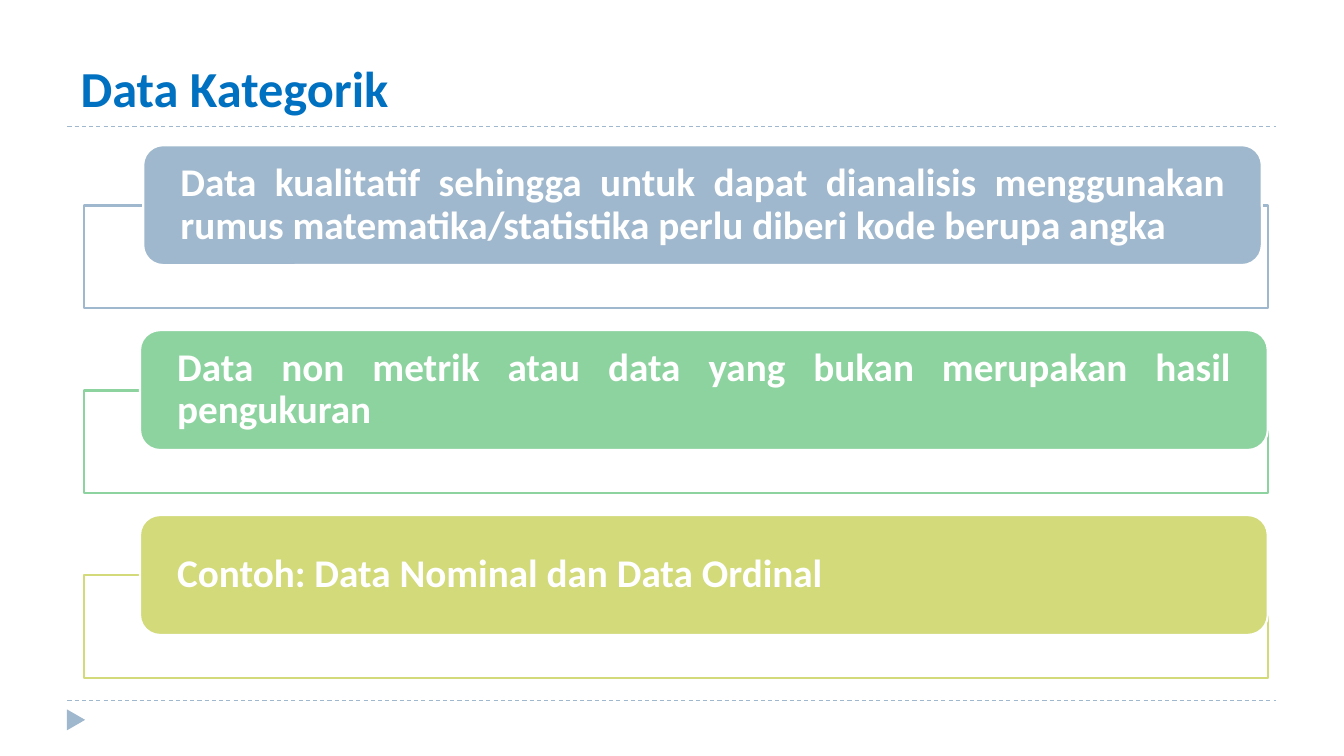
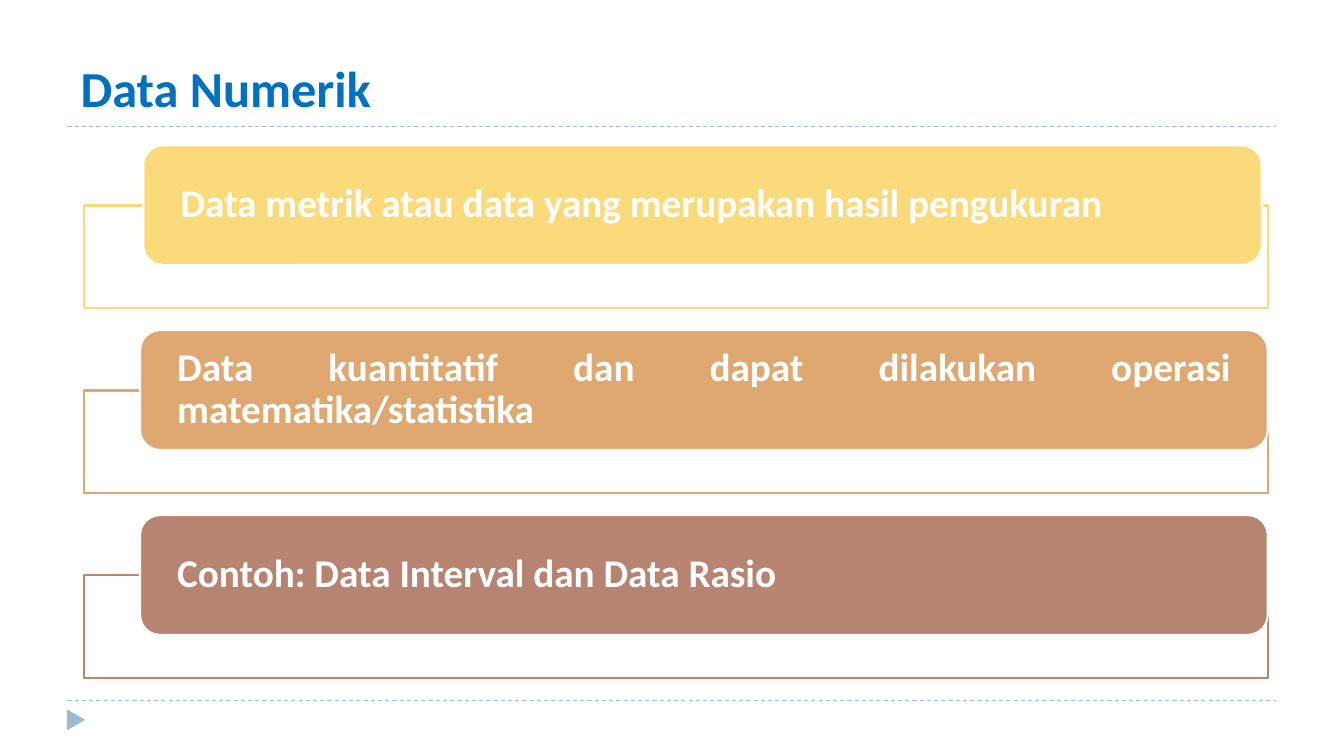
from dataclasses import dataclass

import pptx
import pptx.dml.color
import pptx.enum.dml
import pptx.enum.shapes
import pptx.enum.text
import pptx.oxml.ns
import pptx.shapes.autoshape
import pptx.slide
import pptx.util
from lxml import etree
from pptx.util import Cm, Pt

FONT = "Calibri"
WHITE = "FFFFFF"
TITLE_BLUE = "0070C0"
RULE_BLUE = "9FB8CD"

RULE_LEFT, RULE_RIGHT = 1.70, 32.16
RULE_TOPS = (3.18, 17.65)

FRAME_LEFT, FRAME_WIDTH, FRAME_HEIGHT = 2.11, 29.85, 2.59
BAR_TOP, BAR_HEIGHT = 3.66, 3.02
ROW_PITCH = 4.66
FRAME_DROP = 1.52  # from the top of a bar to the top of its frame
FIRST_BAR = (3.61, 28.19)  # left, width
OTHER_BAR = (3.53, 28.42)

SHAPES = pptx.enum.shapes.MSO_SHAPE


@dataclass(frozen=True)
class Statement:
    text: str
    color: str


@dataclass(frozen=True)
class Topic:
    title: str
    statements: tuple[Statement, ...]


TOPICS = (
    Topic("Data Kategorik", (
        Statement("Data kualitatif sehingga untuk dapat dianalisis menggunakan rumus "
                  "matematika/statistika perlu diberi kode berupa angka", "9FB8CD"),
        Statement("Data non metrik atau data yang bukan merupakan hasil pengukuran", "8DD3A0"),
        Statement("Contoh: Data Nominal dan Data Ordinal", "D2DA7A"),
    )),
    Topic("Data Numerik", (
        Statement("Data metrik atau data yang merupakan hasil pengukuran", "FADA7A"),
        Statement("Data kuantitatif dan dapat dilakukan operasi matematika/statistika", "DFA870"),
        Statement("Contoh: Data Interval dan Data Rasio", "B88472"),
    )),
)


def rgb(color: str) -> pptx.dml.color.RGBColor:
    return pptx.dml.color.RGBColor.from_string(color)


def add_span(para, text: str, size: float, color: str) -> None:
    span = para.add_run()
    span.text = text
    span.font.name = FONT
    span.font.size = Pt(size)
    span.font.bold = True
    span.font.color.rgb = rgb(color)


def add_box(page: pptx.slide.Slide, kind: SHAPES, left: float, top: float, width: float,
            height: float, fill: str, line: str | None = None) -> pptx.shapes.autoshape.Shape:
    """Add a flat preset shape; lengths are in centimetres."""
    box = page.shapes.add_shape(kind, Cm(left), Cm(top), Cm(width), Cm(height))
    box.shadow.inherit = False
    box.fill.solid()
    box.fill.fore_color.rgb = rgb(fill)
    if line is None:
        box.line.fill.background()
    else:
        box.line.color.rgb = rgb(line)
        box.line.width = Pt(1.5)
    return box


def add_rule(page: pptx.slide.Slide, top: float) -> None:
    rule = page.shapes.add_connector(pptx.enum.shapes.MSO_CONNECTOR.STRAIGHT,
                                     Cm(RULE_LEFT), Cm(top), Cm(RULE_RIGHT), Cm(top))
    rule.line.color.rgb = rgb(RULE_BLUE)
    rule.line.width = Pt(0.75)
    rule.line.dash_style = pptx.enum.dml.MSO_LINE.DASH
    properties = rule.element.find(pptx.oxml.ns.qn("p:spPr"))
    etree.SubElement(properties, pptx.oxml.ns.qn("a:effectLst"))


def add_decoration(page: pptx.slide.Slide) -> None:
    for top in RULE_TOPS:
        add_rule(page, top)
    marker = add_box(page, SHAPES.ISOSCELES_TRIANGLE, 1.65, 17.91, 0.53, 0.46, RULE_BLUE)
    marker.rotation = 90


def set_title(page: pptx.slide.Slide, text: str) -> None:
    title = page.shapes.title
    title.left, title.top, title.width, title.height = Cm(1.73), Cm(0.38), Cm(30.48), Cm(2.74)
    frame = title.text_frame
    frame.auto_size = pptx.enum.text.MSO_AUTO_SIZE.NONE
    frame.vertical_anchor = pptx.enum.text.MSO_ANCHOR.BOTTOM
    frame.margin_left = frame.margin_right = Cm(0.3)
    frame.margin_top = frame.margin_bottom = Cm(0.15)
    para = frame.paragraphs[0]
    para.alignment = pptx.enum.text.PP_ALIGN.LEFT
    add_span(para, text, 36, TITLE_BLUE)


def add_statement(page: pptx.slide.Slide, row: int, statement: Statement) -> None:
    """Add one row: an outlined frame with a coloured text bar over it."""
    top = BAR_TOP + row * ROW_PITCH
    left, width = FIRST_BAR if row == 0 else OTHER_BAR
    add_box(page, SHAPES.RECTANGLE, FRAME_LEFT, top + FRAME_DROP, FRAME_WIDTH, FRAME_HEIGHT,
            WHITE, statement.color)
    bar = add_box(page, SHAPES.ROUNDED_RECTANGLE, left, top, width, BAR_HEIGHT,
                  statement.color, WHITE)
    frame = bar.text_frame
    frame.word_wrap = True
    frame.vertical_anchor = pptx.enum.text.MSO_ANCHOR.MIDDLE
    frame.margin_left = frame.margin_right = Cm(0.79)
    frame.margin_top = frame.margin_bottom = 0
    para = frame.paragraphs[0]
    para.alignment = pptx.enum.text.PP_ALIGN.JUSTIFY
    para.line_spacing = 0.9
    add_span(para, statement.text, 28, WHITE)


def add_topic(deck, topic: Topic) -> None:
    page = deck.slides.add_slide(deck.slide_layouts.get_by_name("Title Only"))
    add_decoration(page)
    set_title(page, topic.title)
    for row, statement in enumerate(topic.statements):
        add_statement(page, row, statement)


def main() -> None:
    deck = pptx.Presentation()
    deck.slide_width, deck.slide_height = Cm(33.87), Cm(19.05)
    for topic in TOPICS:
        add_topic(deck, topic)
    deck.save("out.pptx")


if __name__ == "__main__":
    main()
